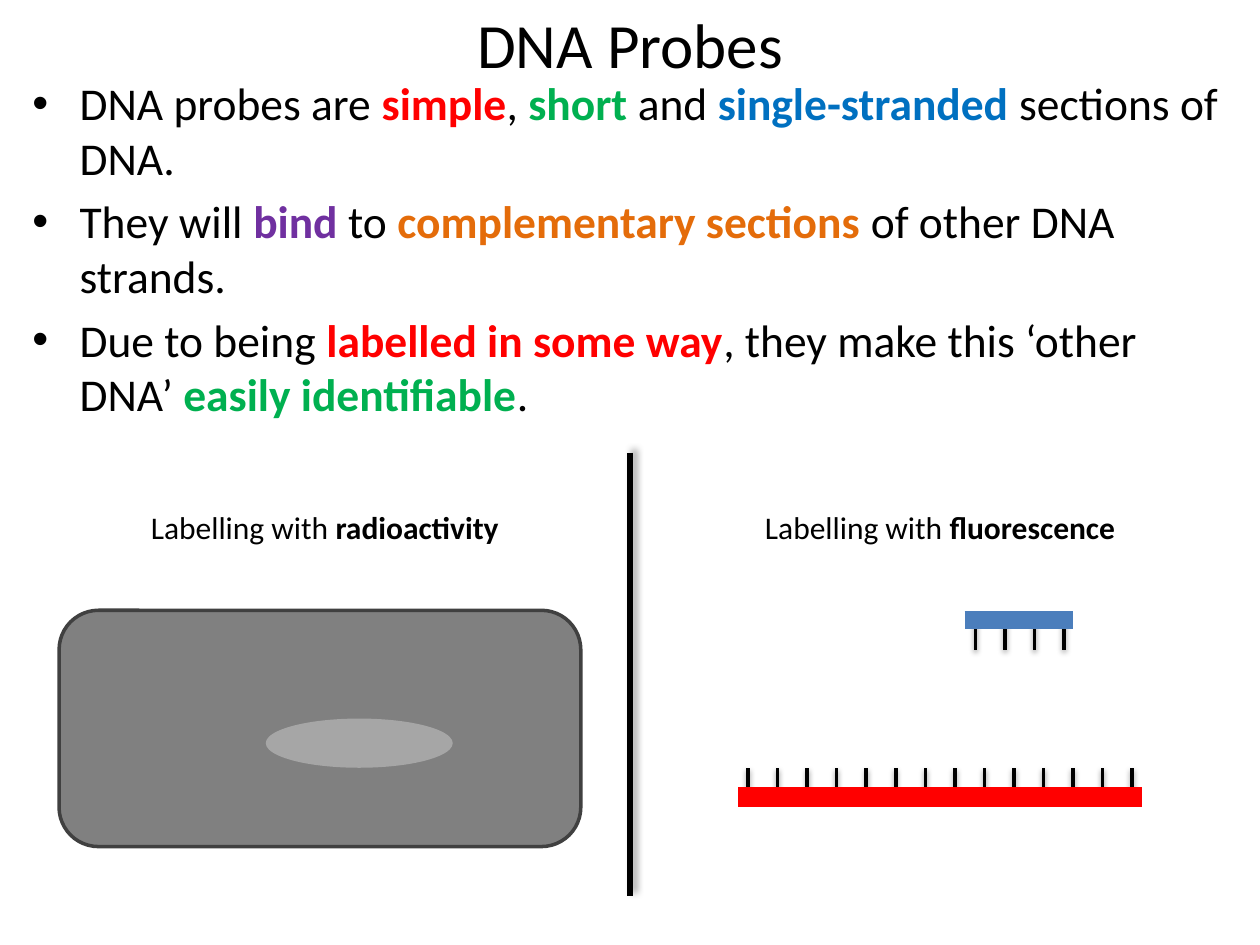
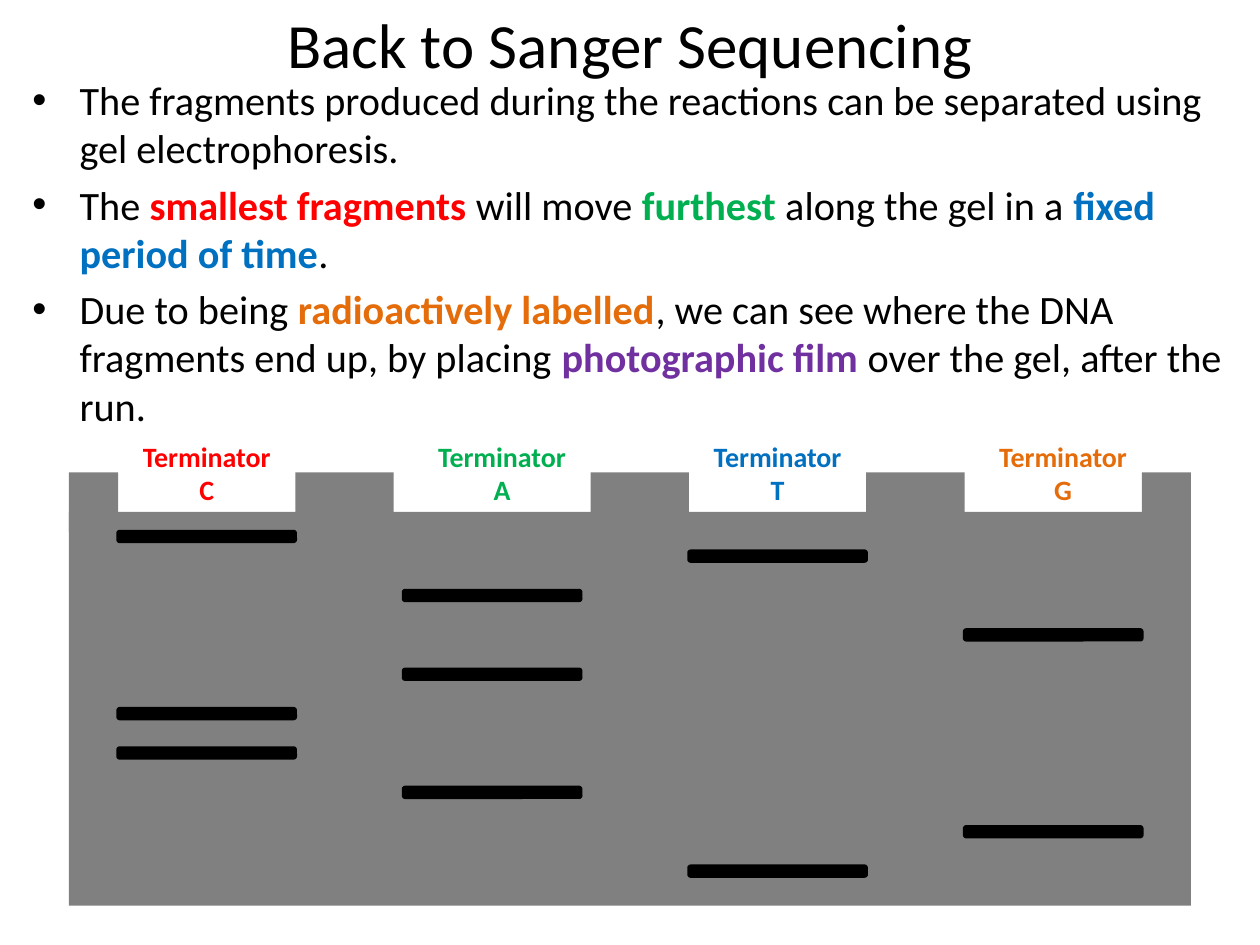
from lxml.etree import SubElement
from pptx import Presentation
from pptx.dml.color import RGBColor
from pptx.enum.shapes import MSO_CONNECTOR as Link, MSO_SHAPE as Form
from pptx.enum.text import MSO_ANCHOR as Anchor, MSO_AUTO_SIZE as Fit, PP_ALIGN as Align
from pptx.oxml.ns import qn
from pptx.util import Pt

PX = 914400 / 128
BLACK, RED, GREEN, BLUE = "000000", "FF0000", "00B050", "0070C0"
ORANGE, PURPLE, GREY, WHITE = "E46C0A", "7030A0", "808080", "FFFFFF"
TITLE_BOX = (64, 18, 1152, 51)
BODY_BOX = (20, 70, 1240, 870)
TICK_SHADOW = (38, 3.1, 1.6, 90)
DIVIDER_SHADOW = (40, 4, 3, 315)
rgb = RGBColor.from_string


def write(holder, paragraphs, box=None, size=18, align=None, anchor=Anchor.TOP, fit=Fit.NONE):
    if box:
        holder.left, holder.top, holder.width, holder.height = [round(v * PX) for v in box]
    frame = holder.text_frame
    frame.word_wrap = True
    frame.auto_size = fit
    frame.vertical_anchor = anchor
    for number, runs in enumerate(paragraphs):
        paragraph = frame.add_paragraph() if number else frame.paragraphs[0]
        paragraph.alignment = align
        for words, *accent in runs:
            run = paragraph.add_run()
            run.text = words
            run.font.name = "Calibri"
            run.font.size = Pt(size)
            run.font.bold = bool(accent)
            run.font.color.rgb = rgb(accent[0] if accent else BLACK)


def draw_line(canvas, ends, color, width, shadow=None):
    line = canvas.add_connector(Link.STRAIGHT, *[round(v * PX) for v in ends])
    line.line.color.rgb = rgb(color)
    line.line.width = Pt(width)
    effects = SubElement(line._element.spPr, qn("a:effectLst"))
    if shadow:
        alpha, blur, distance, angle = shadow
        outer = SubElement(effects, qn("a:outerShdw"), blurRad=str(Pt(blur)),
                           dist=str(Pt(distance)), dir=str(angle * 60000), rotWithShape="0")
        tint = SubElement(outer, qn("a:srgbClr"), val=BLACK)
        SubElement(tint, qn("a:alpha"), val=str(alpha * 1000))


deck = Presentation()
deck.slide_width = deck.slide_height = round(1280 * PX)
deck.slide_height = round(960 * PX)

contents = [
    ("DNA Probes", 26, [
        [("DNA probes are ",), ("simple", RED), (", ",), ("short ", GREEN), ("and ",),
         ("single-stranded", BLUE), (" sections of DNA.",)],
        [("They will ",), ("bind ", PURPLE), ("to ",), ("complementary sections ", ORANGE),
         ("of other DNA strands.",)],
        [("Due to being ",), ("labelled in some way", RED),
         (", they make this ‘other DNA’ ",), ("easily identifiable", GREEN), (".",)],
    ]),
    ("Back to Sanger Sequencing", 23, [
        [("The fragments produced during the reactions can be separated using gel electrophoresis.",)],
        [("The ",), ("smallest fragments ", RED), ("will move ",), ("furthest", GREEN),
         (" along the gel in a ",), ("fixed period of time", BLUE), (".",)],
        [("Due to being ",), ("radioactively labelled", ORANGE),
         (", we can see where the DNA fragments end up, by placing ",),
         ("photographic film ", PURPLE), ("over the gel, after the run.",)],
    ]),
]
for heading, body_size, points in contents:
    slide = deck.slides.add_slide(deck.slide_layouts[1])
    write(slide.shapes.title, [[(heading,)]], box=TITLE_BOX, size=36,
          align=Align.CENTER, anchor=Anchor.MIDDLE)
    write(slide.placeholders[1], points, box=BODY_BOX, size=body_size)
probes, gel = [slide.shapes for slide in deck.slides]

solids = [
    (probes, Form.ROUNDED_RECTANGLE, (60, 620, 530, 240), GREY, "404040"),
    (probes, Form.OVAL, (270, 730, 190, 50), "A6A6A6", None),
    (gel, Form.RECTANGLE, (70, 520, 1140, 400), GREY, None),
]
for wall_left, wall_width in [(70, 50), (300, 100), (600, 100), (880, 100), (1160, 50)]:
    solids.append((gel, Form.RECTANGLE, (wall_left, 480, wall_width, 61), GREY, None))

lanes = [
    ("C", RED, 130, 120, [540, 720, 760]),
    ("A", GREEN, 430, 410, [600, 680, 800]),
    ("T", BLUE, 710, 700, [560, 880]),
    ("G", ORANGE, 1000, 980, [640, 840]),
]
for base, color, label_left, band_left, band_tops in lanes:
    for band_top in band_tops:
        solids.append((gel, Form.ROUNDED_RECTANGLE, (band_left, band_top, 180, 10), BLACK, BLACK))

for canvas, form, box, fill, outline in solids:
    solid = canvas.add_shape(form, *[round(v * PX) for v in box])
    solid.shadow.inherit = False
    solid.fill.solid()
    solid.fill.fore_color.rgb = rgb(fill)
    if outline:
        solid.line.color.rgb = rgb(outline)
        solid.line.width = Pt(2)
    else:
        solid.line.fill.background()

for base, color, label_left, band_left, band_tops in lanes:
    write(gel.add_textbox(0, 0, 0, 0), [[(f"Terminator {base}", color)]],
          box=(label_left, 440, 160, 82), size=16, align=Align.CENTER, fit=Fit.SHAPE_TO_FIT_TEXT)

for method, method_left, method_width in [("radioactivity", 130, 400), ("fluorescence", 760, 390)]:
    write(probes.add_textbox(0, 0, 0, 0), [[("Labelling with ",), (method, BLACK)]],
          box=(method_left, 510, method_width, 51), align=Align.CENTER, fit=Fit.SHAPE_TO_FIT_TEXT)

draw_line(probes, (640, 460, 640, 910), BLACK, 3, DIVIDER_SHADOW)
probe_group = probes.add_group_shape().shapes
strands = [
    (probes, 760, 14, 810, (750, 810, 1160, 810), RED, 11.5),
    (probe_group, 991, 4, 660, (980, 630, 1090, 630), "4B7EBC", 10.5),
]
for canvas, first_base, base_count, base_bottom, backbone, color, thickness in strands:
    for number in range(base_count):
        x = first_base + 30 * number
        draw_line(canvas, (x, base_bottom, x, base_bottom - 30), BLACK, 2, TICK_SHADOW)
    draw_line(canvas, backbone, color, thickness)

deck.save("out.pptx")
